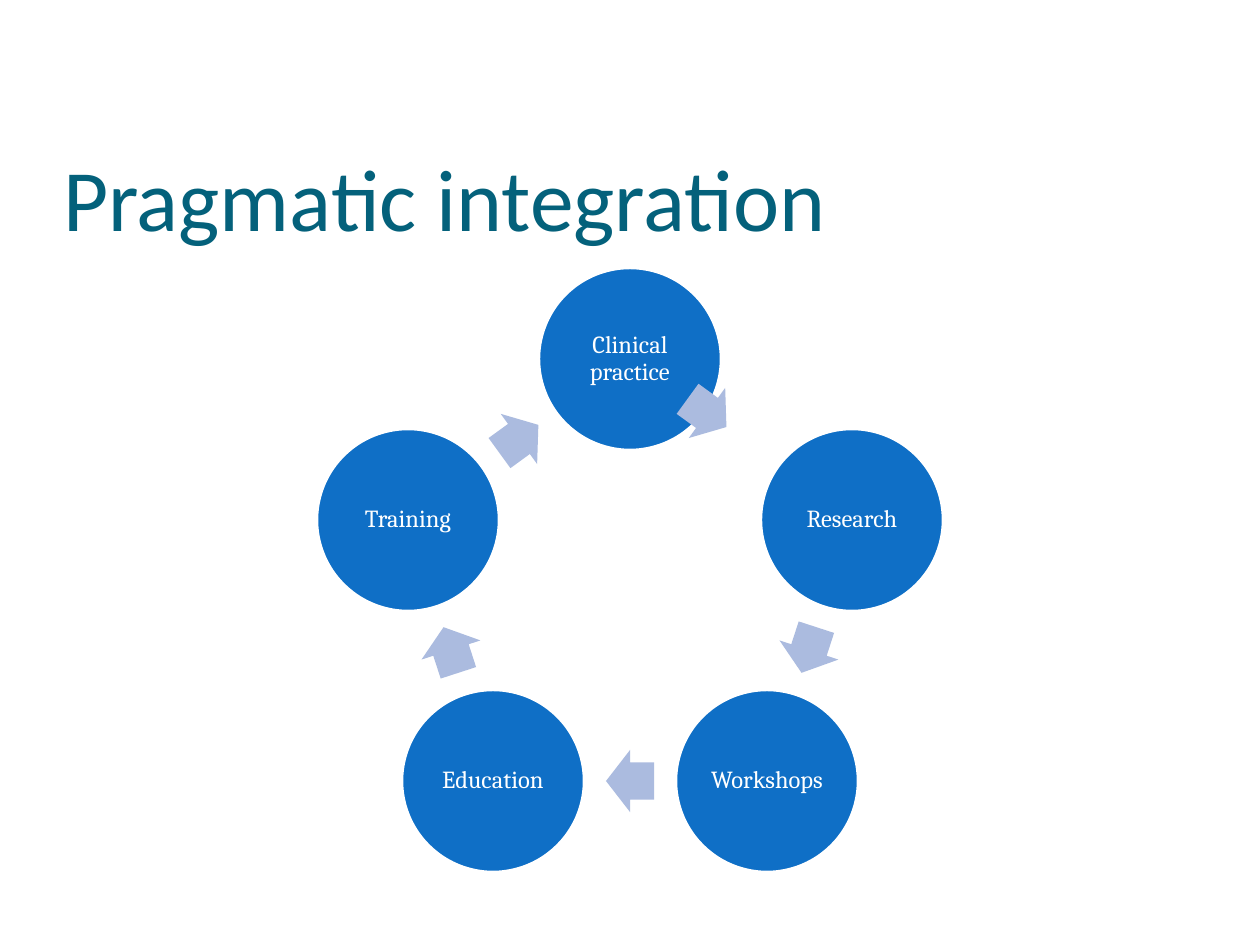
"""Build a slide showing a five-step cycle of pragmatic integration."""
import math

import pptx
import pptx.dml.color
import pptx.enum.shapes
import pptx.enum.text
import pptx.util

PX = 914400 // 126
COLORS = {"title": "04617B", "circle": "0F6FC6", "arrow": "ABBBDF", "white": "FFFFFF"}
STEPS = ["Clinical practice", "Research", "Workshops", "Education", "Training"]
CENTER_X, CENTER_Y, RADIUS = 630, 592, 233
CIRCLE_SIZE, ARROW_WIDTH, ARROW_HEIGHT = 183, 48, 62
FIRST_ARROW_SHIFT = (-34, -26)


def ring_point(angle, radius):
    turn = math.radians(angle)
    return (round(CENTER_X + radius * math.sin(turn)),
            round(CENTER_Y - radius * math.cos(turn)))


class SlideBuilder:
    def __init__(self, page):
        self.page = page
        self.align = pptx.enum.text.PP_ALIGN
        self.anchor = pptx.enum.text.MSO_ANCHOR
        self.kinds = pptx.enum.shapes.MSO_SHAPE

    def color(self, name):
        return pptx.dml.color.RGBColor.from_string(COLORS[name])

    def set_text(self, box, text, font, size, color, align, anchor, insets):
        frame = box.text_frame
        frame.word_wrap = True
        frame.auto_size = pptx.enum.text.MSO_AUTO_SIZE.NONE
        frame.vertical_anchor = anchor
        frame.margin_left = frame.margin_right = insets[0] * PX
        frame.margin_top = frame.margin_bottom = insets[1] * PX
        frame.text = text
        para = frame.paragraphs[0]
        para.alignment = align
        para.font.name = font
        para.font.size = pptx.util.Pt(size)
        para.font.color.rgb = self.color(color)
        return para

    def title(self, text, left, top, width, height):
        box = self.page.shapes.title
        box.left, box.top = left * PX, top * PX
        box.width, box.height = width * PX, height * PX
        self.set_text(box, text, "Calibri", 50, "title",
                      self.align.LEFT, self.anchor.BOTTOM, (0, 6))

    def shape(self, kind, center, width, height, fill):
        shape = self.page.shapes.add_shape(
            kind, (center[0] * 2 - width) * PX // 2,
            (center[1] * 2 - height) * PX // 2, width * PX, height * PX)
        shape.shadow.inherit = False
        shape.fill.solid()
        shape.fill.fore_color.rgb = self.color(fill)
        return shape

    def circle(self, text, center):
        circle = self.shape(self.kinds.OVAL, center, CIRCLE_SIZE, CIRCLE_SIZE, "circle")
        circle.line.color.rgb = self.color("white")
        circle.line.width = pptx.util.Pt(2)
        para = self.set_text(circle, text, "Cambria", 14, "white",
                             self.align.CENTER, self.anchor.MIDDLE, (2, 2))
        para.line_spacing = 0.9

    def arrow(self, center, rotation):
        arrow = self.shape(self.kinds.RIGHT_ARROW, center,
                           ARROW_WIDTH, ARROW_HEIGHT, "arrow")
        arrow.line.fill.background()
        arrow.adjustments[0] = 0.6
        arrow.adjustments[1] = 0.5
        arrow.rotation = rotation


def main():
    deck = pptx.Presentation()
    deck.slide_width = 1260 * PX
    deck.slide_height = 945 * PX
    builder = SlideBuilder(deck.slides.add_slide(deck.slide_layouts[5]))
    builder.title("Pragmatic integration", 63, 97, 1134, 158)

    step_angle = 360 / len(STEPS)
    arrow_radius = RADIUS * math.cos(math.radians(step_angle / 2))
    for index, step in enumerate(STEPS):
        angle = index * step_angle
        builder.circle(step, ring_point(angle, RADIUS))
        middle = angle + step_angle / 2
        x, y = ring_point(middle, arrow_radius)
        shift_x, shift_y = FIRST_ARROW_SHIFT if index == 0 else (0, 0)
        builder.arrow((x + shift_x, y + shift_y), middle)

    deck.save("out.pptx")


if __name__ == "__main__":
    main()
